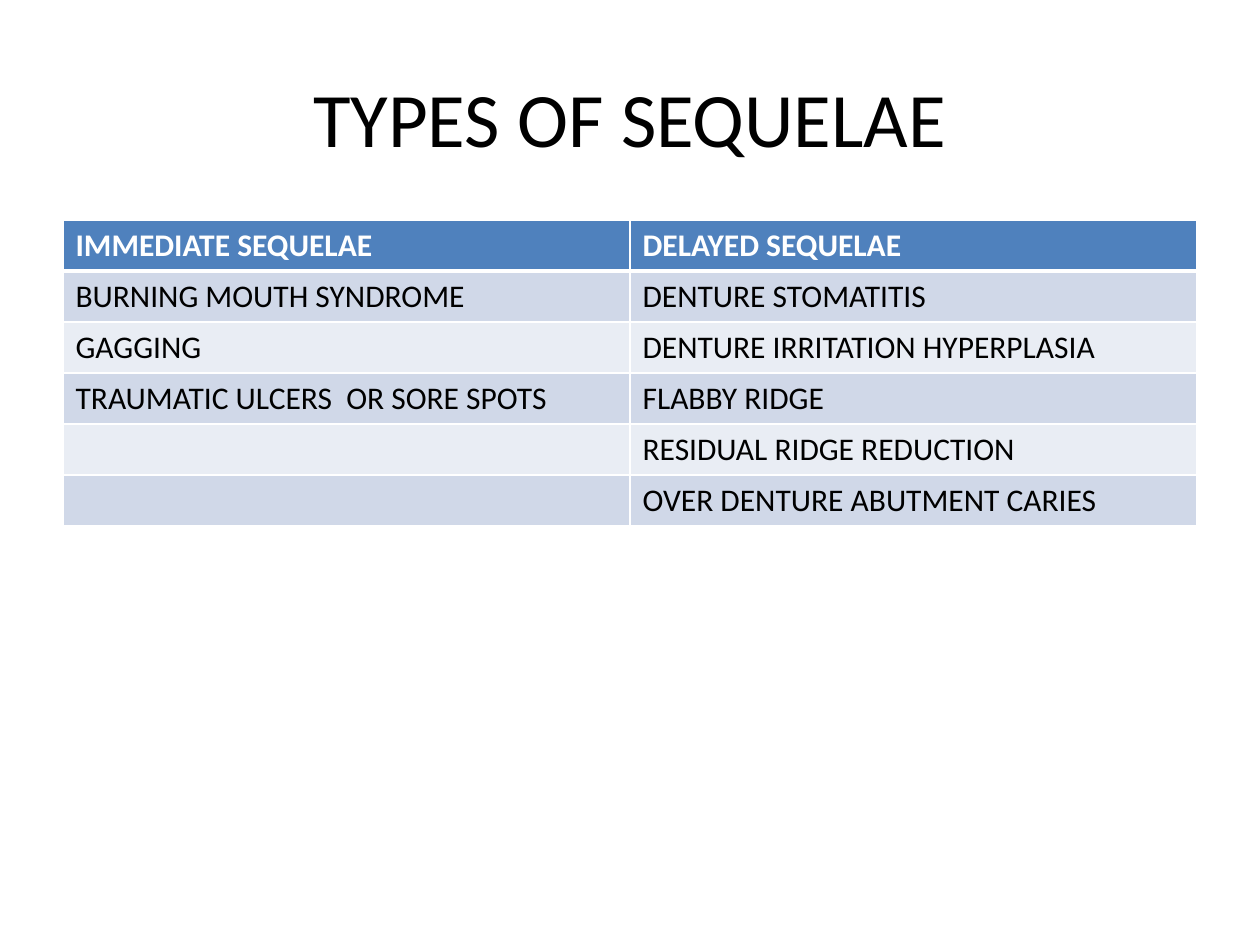
from dataclasses import dataclass

from lxml import etree
from pptx import Presentation
from pptx import util as u
from pptx.dml.color import RGBColor
from pptx.enum import text
from pptx.oxml import ns

PX = u.Inches(1) / 126
SLIDE_SIZE = (1260, 945)
BLANK_LAYOUT = 6

SEQUELAE = [
    ("IMMEDIATE SEQUELAE", "DELAYED SEQUELAE"),
    ("BURNING MOUTH SYNDROME", "DENTURE STOMATITIS"),
    ("GAGGING", "DENTURE IRRITATION HYPERPLASIA"),
    ("TRAUMATIC ULCERS  OR SORE SPOTS", "FLABBY RIDGE"),
    ("", "RESIDUAL RIDGE REDUCTION"),
    ("", "OVER DENTURE ABUTMENT CARIES"),
]


@dataclass(frozen=True)
class Theme:
    font: str = "Calibri"
    title_size: int = 44
    table_size: int = 18
    ink: str = "000000"
    header_ink: str = "FFFFFF"
    header_fill: str = "4F81BD"
    bands: tuple = ("D0D8E8", "E9EDF4")
    border: str = "FFFFFF"
    border_width: int = 1
    header_rule: int = 3


def px(length):
    return u.Emu(round(length * PX))


class SlideBuilder:
    def __init__(self, slide, theme):
        self.slide = slide
        self.theme = theme

    def add_run(self, para, words, size, color, bold=False):
        span = para.add_run()
        span.text = words
        span.font.name = self.theme.font
        span.font.size = u.Pt(size)
        span.font.bold = bold
        span.font.color.rgb = RGBColor.from_string(color)

    def title(self, words, left, top, width, height):
        box = self.slide.shapes.add_textbox(*map(px, (left, top, width, height)))
        frame = box.text_frame
        frame.word_wrap = True
        frame.vertical_anchor = text.MSO_ANCHOR.MIDDLE
        para = frame.paragraphs[0]
        para.alignment = text.PP_ALIGN.CENTER
        self.add_run(para, words, self.theme.title_size, self.theme.ink)

    def border_cell(self, cell, top, bottom):
        """Draw all four borders; the top and bottom widths are in points."""
        side = self.theme.border_width
        widths = {"lnL": side, "lnR": side, "lnT": top, "lnB": bottom}
        properties = cell._tc.get_or_add_tcPr()
        # Border elements have to come before the fill.
        for position, (tag, width) in enumerate(widths.items()):
            line = etree.Element(ns.qn(f"a:{tag}"), w=str(u.Pt(width)))
            fill = etree.SubElement(line, ns.qn("a:solidFill"))
            etree.SubElement(fill, ns.qn("a:srgbClr"), val=self.theme.border)
            properties.insert(position, line)

    def table(self, rows, left, top, width, row_height):
        theme = self.theme
        frame = self.slide.shapes.add_table(
            len(rows), len(rows[0]),
            *map(px, (left, top, width, row_height * len(rows))))
        for index, row in enumerate(rows):
            header = index == 0
            fill = theme.header_fill if header else theme.bands[(index - 1) % 2]
            ink = theme.header_ink if header else theme.ink
            above = theme.header_rule if index == 1 else theme.border_width
            below = theme.header_rule if header else theme.border_width
            for column, words in enumerate(row):
                cell = frame.table.cell(index, column)
                cell.fill.solid()
                cell.fill.fore_color.rgb = RGBColor.from_string(fill)
                self.border_cell(cell, above, below)
                if words:
                    self.add_run(cell.text_frame.paragraphs[0], words,
                                 theme.table_size, ink, header)


def main():
    deck = Presentation()
    deck.slide_width, deck.slide_height = map(px, SLIDE_SIZE)
    slide = deck.slides.add_slide(deck.slide_layouts[BLANK_LAYOUT])
    page = SlideBuilder(slide, Theme())
    page.title("TYPES OF SEQUELAE", 63, 38, 1134, 157)
    page.table(SEQUELAE, 63, 220, 1134, 51)
    deck.save("out.pptx")


if __name__ == "__main__":
    main()
